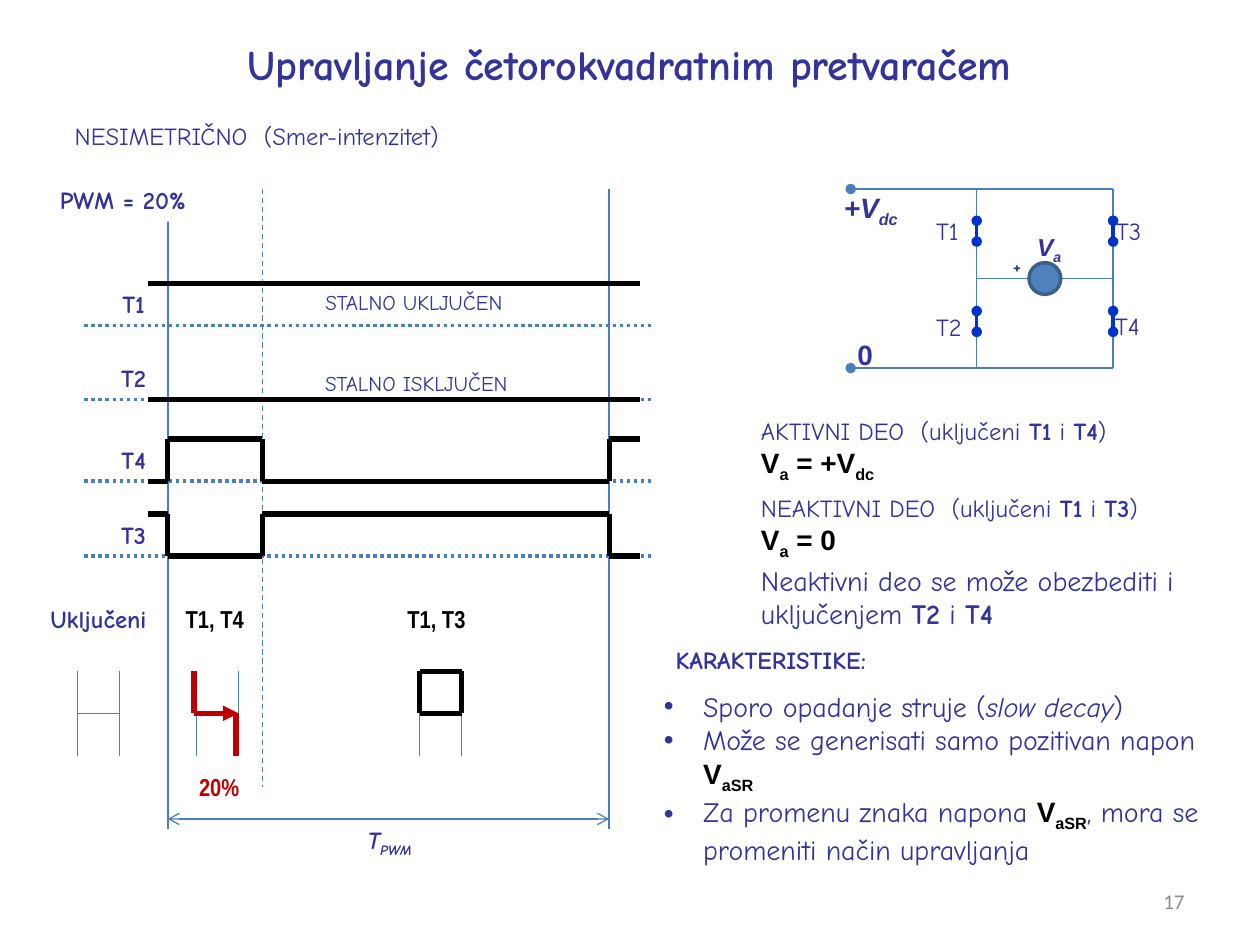
from itertools import pairwise

from lxml.etree import SubElement
from pptx import Presentation
from pptx.dml.color import RGBColor
from pptx.enum.dml import MSO_LINE
from pptx.enum.shapes import MSO_CONNECTOR, MSO_SHAPE
from pptx.enum.text import MSO_ANCHOR, MSO_AUTO_SIZE, PP_ALIGN
from pptx.oxml.ns import qn
from pptx.util import Cm, Pt

NAVY = RGBColor(0x33, 0x33, 0x99)
BLUE = RGBColor(0x4B, 0x7E, 0xBC)
MOTOR = RGBColor(0x4F, 0x81, 0xBD)
MOTOR_EDGE = RGBColor(0x3A, 0x5F, 0x8C)
SWITCH = RGBColor(0x00, 0x33, 0xCC)
RED = RGBColor(0xC0, 0x00, 0x00)
BLACK = RGBColor(0, 0, 0)
WHITE = RGBColor(0xFF, 0xFF, 0xFF)
GREY = RGBColor(0x8C, 0x8C, 0x8C)
HAND, SANS, NARROW = "Comic Neue", "Arial", "Arial Narrow"


def set_font(font, size, color=NAVY, name=HAND, bold=False, italic=False):
    font.size, font.name, font.bold, font.italic = Pt(size), name, bold, italic
    font.color.rgb = color


def add_runs(p, *runs):
    """Runs are strings or (text, marks): b bold, i italic, m math face, _ subscript."""
    for run in runs:
        text, marks = (run, "") if isinstance(run, str) else run
        r = p.add_run()
        r.text = text
        if "b" in marks:
            r.font.bold = True
        if "i" in marks:
            r.font.italic = True
        if "m" in marks:
            set_font(r.font, 16, BLACK, SANS, bold=True)
        if "_" in marks:
            r.font._element.set("baseline", "-25000")


def text(s, x, y, w, h, *paragraphs, size=14, align=PP_ALIGN.CENTER, wrap=False, **font):
    """Text box; each paragraph is a list of runs."""
    sp = s.shapes.add_textbox(Cm(x), Cm(y), Cm(w), Cm(h))
    tf = sp.text_frame
    tf.word_wrap = wrap
    for n, runs in enumerate(paragraphs):
        p = tf.add_paragraph() if n else tf.paragraphs[0]
        p.alignment = align
        set_font(p.font, size, **font)
        add_runs(p, *runs)
    return sp


def line(s, x1, y1, x2, y2, color=BLUE, width=0.75, dash=None, head=None, tail=None):
    c = s.shapes.add_connector(MSO_CONNECTOR.STRAIGHT, Cm(x1), Cm(y1), Cm(x2), Cm(y2))
    c.line.color.rgb, c.line.width = color, Pt(width)
    if dash:
        c.line.dash_style = dash
    for end, kind in (("a:headEnd", head), ("a:tailEnd", tail)):
        if kind:
            SubElement(c.line._get_or_add_ln(), qn(end), type=kind)
    SubElement(c._element.spPr, qn("a:effectLst"))


def polyline(s, points, **style):
    for start, end in pairwise(points):
        if start != end:
            line(s, *start, *end, **style)


def bridge_icon(s, x, y, size=0.85):
    """Small H: two legs and the load between them."""
    for leg in (x, x + size):
        line(s, leg, y, leg, y + 2 * size)
    line(s, x, y + size, x + size, y + size)


def timing_diagram(s, x, y):
    lead, on, off, end, tail = (x + d for d in (2.34, 2.74, 4.65, 11.64, 12.26))
    swing = 0.85
    # Name, axis height and state in each of the four intervals
    signals = (("T1", 2.75, (1, 1, 1, 1)), ("T2", 4.24, (0, 0, 0, 0)),
               ("T4", 5.89, (0, 1, 0, 1)), ("T3", 7.4, (1, 0, 1, 0)))
    # Axes and period limits
    for _, axis, _ in signals:
        line(s, x + 1.06, y + axis, x + 12.49, y + axis, width=0, dash=MSO_LINE.ROUND_DOT)
    line(s, off, y, off, y + 12.06, dash=MSO_LINE.DASH)
    for edge in (on, end):
        line(s, edge, y, edge, y + 12.9, width=1.25)
    sp = text(s, x + 0.1, y - 0.2, 3.48, 0.86, ["PWM = 20%"], bold=True)
    sp.fill.solid()
    sp.fill.fore_color.rgb = WHITE
    line(s, on, y + 12.7, end, y + 12.7, head="arrow", tail="arrow")
    text(s, x + 6.35, y + 12.7, 1.83, 0.86, ["T", ("PWM ", "_")], bold=True, italic=True)
    # Waveforms
    for name, axis, states in signals:
        points = []
        for (left, right), state in zip(pairwise((lead, on, off, end, tail)), states):
            level = y + axis - swing * state
            points += [(left, level), (right, level)]
        polyline(s, points, color=BLACK, width=3)
        text(s, x + 1.47, y + axis - swing, 1.17, 0.86, [name], bold=True)
    text(s, x + 5.33, y + 1.9, 4.75, 0.76, ["STALNO UKLJUČEN"], size=12)
    text(s, x + 5.28, y + 3.53, 4.95, 0.76, ["STALNO ISKLJUČEN"], size=12)
    # Conducting switches
    text(s, x, y + 8.25, 2.69, 0.86, ["Uključeni"], bold=True)
    for dx, label in ((2.84, "T1, T4"), (7.31, "T1, T3")):
        text(s, x + dx, y + 8.25, 1.7, 0.86, [label], name=NARROW, color=BLACK, bold=True)
    top, mid, low = (y + 9.72 + swing * n for n in range(3))
    for dx in (0.92, 3.32, 7.82):
        bridge_icon(s, x + dx, top)
    left, right = x + 7.82, x + 7.82 + swing
    polyline(s, [(left, top), (left, mid), (right, mid), (right, top), (left, top)],
             color=BLACK, width=3)
    left, right = x + 3.27, x + 3.27 + swing
    line(s, left, top, left, mid, RED, 3)
    line(s, right, mid, right, low, RED, 3)
    line(s, left, mid, right + 0.05, mid, RED, 3, tail="triangle")
    text(s, x + 3.12, y + 11.63, 1.32, 0.86, ["20%"], name=NARROW, color=RED, bold=True)


def bridge_circuit(s, x, y, w=5.29, h=3.61):
    legs = (x + 2.54, x + w)
    mid = y + h / 2
    # Rails, legs and load
    for rail in (y, y + h):
        line(s, x, rail, x + w, rail, head="oval")
    for leg in legs:
        line(s, leg, y, leg, y + h)
    line(s, legs[0], mid, legs[1], mid)
    d = 0.64
    motor = s.shapes.add_shape(MSO_SHAPE.OVAL, Cm(sum(legs) / 2 - d / 2), Cm(mid - d / 2),
                               Cm(d), Cm(d))
    motor.shadow.inherit = False
    motor.fill.solid()
    motor.fill.fore_color.rgb = MOTOR
    motor.line.color.rgb, motor.line.width = MOTOR_EDGE, Pt(2)
    # Labels
    for name, dx, dy in (("T1", 1.47, 0.43), ("T2", 1.47, 2.36),
                         ("T3", 5.1, 0.43), ("T4", 5.08, 2.34)):
        text(s, x + dx, y + dy, 1.48, 1.04, [name], align=PP_ALIGN.LEFT, wrap=True)
    text(s, x + 3.02, y + 1.19, 1.48, 1.04, ["+"], size=11, align=PP_ALIGN.LEFT,
         wrap=True, bold=True)
    volt = dict(name=SANS, bold=True)
    text(s, x - 0.44, y - 0.1, 1.78, 0.94, ["+V", ("dc ", "_")], size=16, italic=True, **volt)
    text(s, x - 0.13, y + 2.87, 0.84, 0.94, ["0"], size=16, **volt)
    text(s, x + 3.5, y + 0.74, 1.14, 0.86, ["V", ("a", "_"), " "], italic=True, **volt)
    # Switches
    for leg in legs:
        for dy in (0.64, 2.46):
            line(s, leg, y + dy, leg, y + dy + 0.42, SWITCH, 2, head="oval", tail="oval")


def operating_states(s, x, y):
    left = dict(align=PP_ALIGN.LEFT)
    text(s, x, y, 8.61, 1.55,
         ["AKTIVNI DEO  (uključeni ", ("T1", "b"), " i ", ("T4", "b"), ")"],
         [("V", "m"), ("a", "m_"), (" = +V", "m"), ("dc", "m_")], **left)
    text(s, x, y + 1.55, 9.35, 1.55,
         ["NEAKTIVNI DEO  (uključeni ", ("T1", "b"), " i ", ("T3", "b"), ")"],
         [("V", "m"), ("a", "m_"), (" = 0", "m")], **left)
    text(s, x, y + 2.97, 9.75, 1.63, ["Neaktivni deo se može obezbediti i"],
         ["uključenjem ", ("T2", "b"), " i ", ("T4", "b")], size=16, **left)


def place(sp, x, y, w, h):
    sp.left, sp.top, sp.width, sp.height = Cm(x), Cm(y), Cm(w), Cm(h)
    tf = sp.text_frame
    tf.auto_size, tf.vertical_anchor = MSO_AUTO_SIZE.NONE, MSO_ANCHOR.TOP
    return tf


def characteristics(s, x, y):
    text(s, x, y, 5.28, 0.86, ["KARAKTERISTIKE:"], bold=True)
    tf = place(s.placeholders[1], x + 0.23, y + 0.89, 11.71, 3.68)
    items = (["Sporo opadanje struje (", ("slow decay", "i"), ")"],
             ["Može se generisati samo pozitivan napon ", ("V", "m"), ("aSR", "m_")],
             ["Za promenu znaka napona ", ("V", "m"), ("aSR", "m_"),
              ", mora se promeniti način upravljanja"])
    for n, runs in enumerate(items):
        p = tf.add_paragraph() if n else tf.paragraphs[0]
        p.space_before = Pt(0)
        pPr = p._p.get_or_add_pPr()
        pPr.set("marL", str(Cm(0.79)))
        pPr.set("indent", str(-Cm(0.79)))
        set_font(p.font, 16)
        add_runs(p, *runs)


def headings(s):
    tf = place(s.shapes.title, 3.48, 0.64, 18.42, 1.27)
    tf.word_wrap = False
    p = tf.paragraphs[0]
    set_font(p.font, 24, bold=True)
    add_runs(p, "Upravljanje četorokvadratnim pretvaračem")
    text(s, 0.66, 2.31, 9.04, 0.86, ["NESIMETRIČNO  (Smer-intenzitet)"])
    sp = text(s, 18.21, 17.65, 5.92, 1.02, ["17"], size=12, align=PP_ALIGN.RIGHT,
              wrap=True, name="Calibri", color=GREY)
    sp.text_frame.vertical_anchor = MSO_ANCHOR.MIDDLE


prs = Presentation()
prs.slide_width, prs.slide_height = Cm(25.4), Cm(19.05)
s = prs.slides.add_slide(prs.slide_layouts[1])
headings(s)
timing_diagram(s, 0.64, 3.81)
bridge_circuit(s, 17.15, 3.81)
operating_states(s, 15.09, 8.26)
characteristics(s, 12.9, 12.88)
prs.save("out.pptx")
